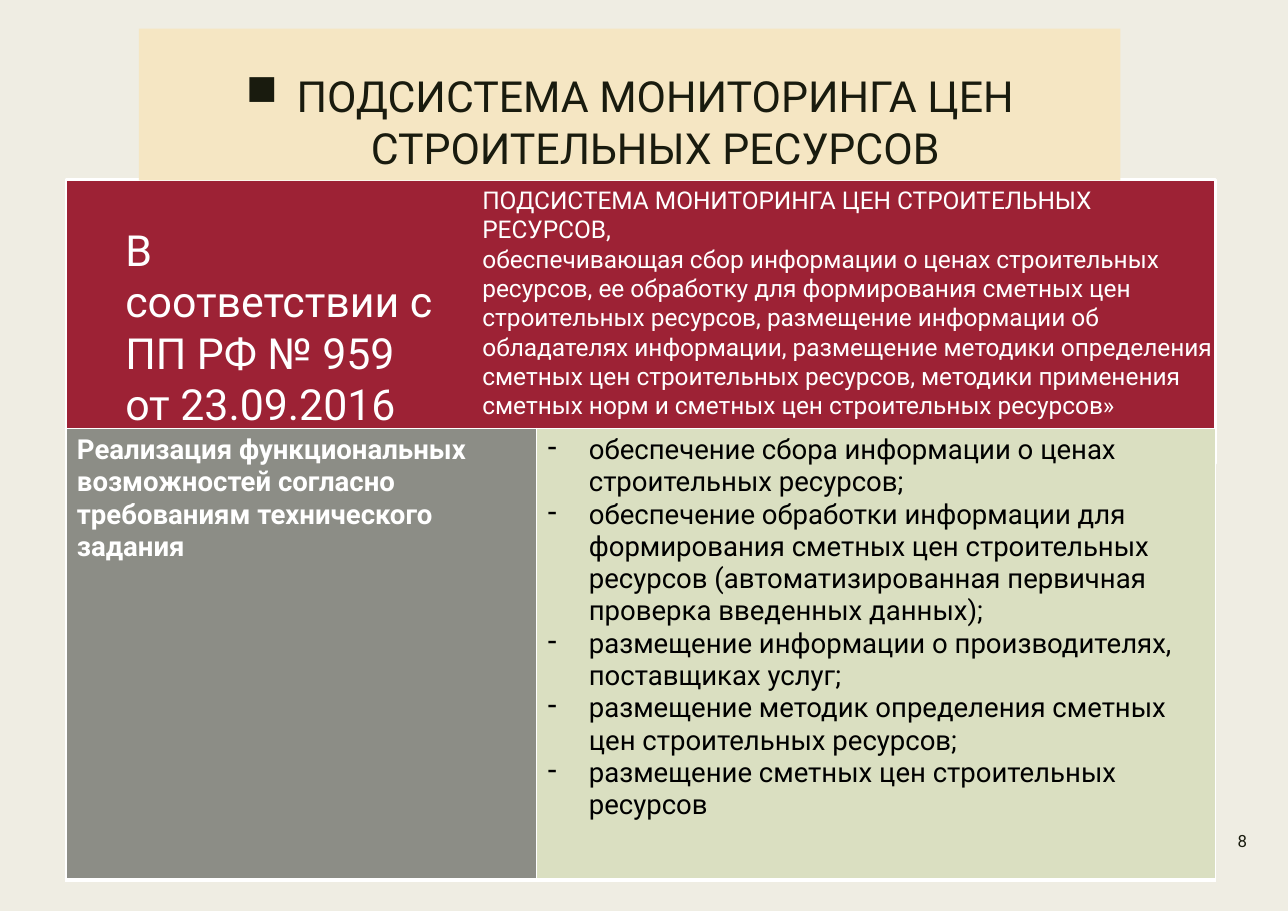
from dataclasses import dataclass

import lxml.etree
import pptx
import pptx.dml.color
import pptx.enum.shapes
import pptx.enum.text
import pptx.oxml.ns
import pptx.util

Cm = pptx.util.Cm
Align = pptx.enum.text.PP_ALIGN
Anchor = pptx.enum.text.MSO_ANCHOR


@dataclass(frozen=True)
class Theme:
    font: str = "Roboto"
    background: str = "EFEDE3"
    banner: str = "F5E6C3"
    decree: str = "9D2235"
    requirement: str = "8C8D86"
    functions: str = "DADFC1"
    dark: str = "191B0E"
    black: str = "000000"
    white: str = "FFFFFF"
    heading_size: int = 28
    table_size: int = 18
    body_size: int = 16
    number_size: int = 11


@dataclass(frozen=True)
class Box:
    left: float
    top: float
    width: float
    height: float

    def lengths(self) -> tuple:
        return Cm(self.left), Cm(self.top), Cm(self.width), Cm(self.height)


@dataclass(frozen=True)
class TextStyle:
    size: int
    color: str
    bold: bool = False
    align: Align = Align.LEFT
    bullet: str = ""
    indent: float = 0
    space_after: float = 0


@dataclass(frozen=True)
class Label:
    box: Box
    text: str
    style: TextStyle
    anchor: Anchor = Anchor.TOP
    side_margin: float = 0.25


@dataclass(frozen=True)
class Panel:
    box: Box
    fill: str
    line: str = ""


@dataclass(frozen=True)
class Cell:
    text: str
    fill: str
    width: float
    style: TextStyle


THEME = Theme()
TABLE_BOX = Box(1.52, 9.88, 26.5, 10.41)
BORDERS = {"lnL": 1, "lnR": 1, "lnT": 1, "lnB": 3}

DECREE_PANEL = Panel(Box(1.52, 4.14, 26.5, 6.55), THEME.decree, THEME.white)
BANNER = Panel(Box(3.2, 0.66, 22.63, 3.5), THEME.banner)
TITLE = "ПОДСИСТЕМА МОНИТОРИНГА ЦЕН СТРОИТЕЛЬНЫХ РЕСУРСОВ"
TITLE_STYLE = TextStyle(THEME.heading_size, THEME.dark, align=Align.CENTER,
                        bullet="■", indent=1.17, space_after=2.2)

LABELS = [
    Label(Box(28.3, 19, 0.6, 0.79), "8",
          TextStyle(THEME.number_size, THEME.dark, align=Align.RIGHT),
          Anchor.MIDDLE, 0.15),
    Label(Box(2.64, 5.03, 7.67, 3.84), "В соответствии с ПП РФ № 959 от 23.09.2016",
          TextStyle(THEME.heading_size, THEME.white)),
    Label(Box(10.87, 4.14, 17.42, 5.74),
          "ПОДСИСТЕМА МОНИТОРИНГА ЦЕН СТРОИТЕЛЬНЫХ РЕСУРСОВ,\n"
          "обеспечивающая сбор информации о ценах строительных ресурсов, "
          "ее обработку для формирования сметных цен строительных ресурсов, "
          "размещение информации об обладателях информации, размещение методики "
          "определения сметных цен строительных ресурсов, методики применения "
          "сметных норм и сметных цен строительных ресурсов»",
          TextStyle(THEME.body_size, THEME.white)),
]

CELLS = [
    Cell("Реализация функциональных возможностей согласно требованиям "
         "технического задания", THEME.requirement, 10.85,
         TextStyle(THEME.table_size, THEME.white, bold=True)),
    Cell("обеспечение сбора информации о ценах строительных ресурсов;\n"
         "обеспечение обработки информации для формирования сметных цен "
         "строительных ресурсов (автоматизированная первичная проверка "
         "введенных данных);\n"
         "размещение информации о производителях, поставщиках услуг;\n"
         "размещение методик определения сметных цен строительных ресурсов;\n"
         "размещение сметных цен строительных ресурсов",
         THEME.functions, 15.65,
         TextStyle(THEME.table_size, THEME.black, bullet="-", indent=0.95)),
]


def rgb(color: str) -> pptx.dml.color.RGBColor:
    return pptx.dml.color.RGBColor.from_string(color)


def paint(fill, color: str) -> None:
    fill.solid()
    fill.fore_color.rgb = rgb(color)


def write_text(text_frame, text: str, style: TextStyle) -> None:
    text_frame.word_wrap = True
    text_frame.text = text
    for paragraph in text_frame.paragraphs:
        paragraph.alignment = style.align
        paragraph.space_after = pptx.util.Pt(style.space_after)
        if style.bullet:
            properties = paragraph._p.get_or_add_pPr()
            properties.set("marL", str(Cm(style.indent)))
            properties.set("indent", str(-Cm(style.indent)))
            bullet = lxml.etree.SubElement(properties, pptx.oxml.ns.qn("a:buChar"))
            bullet.set("char", style.bullet)
        for run in paragraph.runs:
            run.font.name = THEME.font
            run.font.size = pptx.util.Pt(style.size)
            run.font.bold = style.bold
            run.font.color.rgb = rgb(style.color)


def add_panel(slide, panel: Panel):
    shape = slide.shapes.add_shape(
        pptx.enum.shapes.MSO_SHAPE.RECTANGLE, *panel.box.lengths())
    shape.shadow.inherit = False
    paint(shape.fill, panel.fill)
    if panel.line:
        shape.line.color.rgb = rgb(panel.line)
        shape.line.width = pptx.util.Pt(1.5)
    else:
        shape.line.fill.background()
    return shape


def add_banner(slide) -> None:
    text_frame = add_panel(slide, BANNER).text_frame
    text_frame.vertical_anchor = Anchor.TOP
    text_frame.margin_top = Cm(0.95)
    write_text(text_frame, TITLE, TITLE_STYLE)


def add_label(slide, label: Label) -> None:
    text_frame = slide.shapes.add_textbox(*label.box.lengths()).text_frame
    text_frame.vertical_anchor = label.anchor
    text_frame.margin_left = text_frame.margin_right = Cm(label.side_margin)
    write_text(text_frame, label.text, label.style)


def add_borders(cell) -> None:
    properties = cell._tc.get_or_add_tcPr()
    for position, (side, width) in enumerate(BORDERS.items()):
        line = lxml.etree.Element(pptx.oxml.ns.qn(f"a:{side}"))
        line.set("w", str(pptx.util.Pt(width)))
        fill = lxml.etree.SubElement(line, pptx.oxml.ns.qn("a:solidFill"))
        color = lxml.etree.SubElement(fill, pptx.oxml.ns.qn("a:srgbClr"))
        color.set("val", THEME.white)
        properties.insert(position, line)


def add_function_table(slide) -> None:
    table = slide.shapes.add_table(1, len(CELLS), *TABLE_BOX.lengths()).table
    table.first_row = False
    table.horz_banding = False
    for index, content in enumerate(CELLS):
        table.columns[index].width = Cm(content.width)
        cell = table.cell(0, index)
        paint(cell.fill, content.fill)
        write_text(cell.text_frame, content.text, content.style)
        add_borders(cell)


def main() -> None:
    presentation = pptx.Presentation()
    presentation.slide_width = Cm(29.69)
    presentation.slide_height = Cm(21.01)
    slide = presentation.slides.add_slide(presentation.slide_layouts[6])
    paint(slide.background.fill, THEME.background)
    add_panel(slide, DECREE_PANEL)
    add_banner(slide)
    for label in LABELS:
        add_label(slide, label)
    add_function_table(slide)
    presentation.save("out.pptx")


if __name__ == "__main__":
    main()
